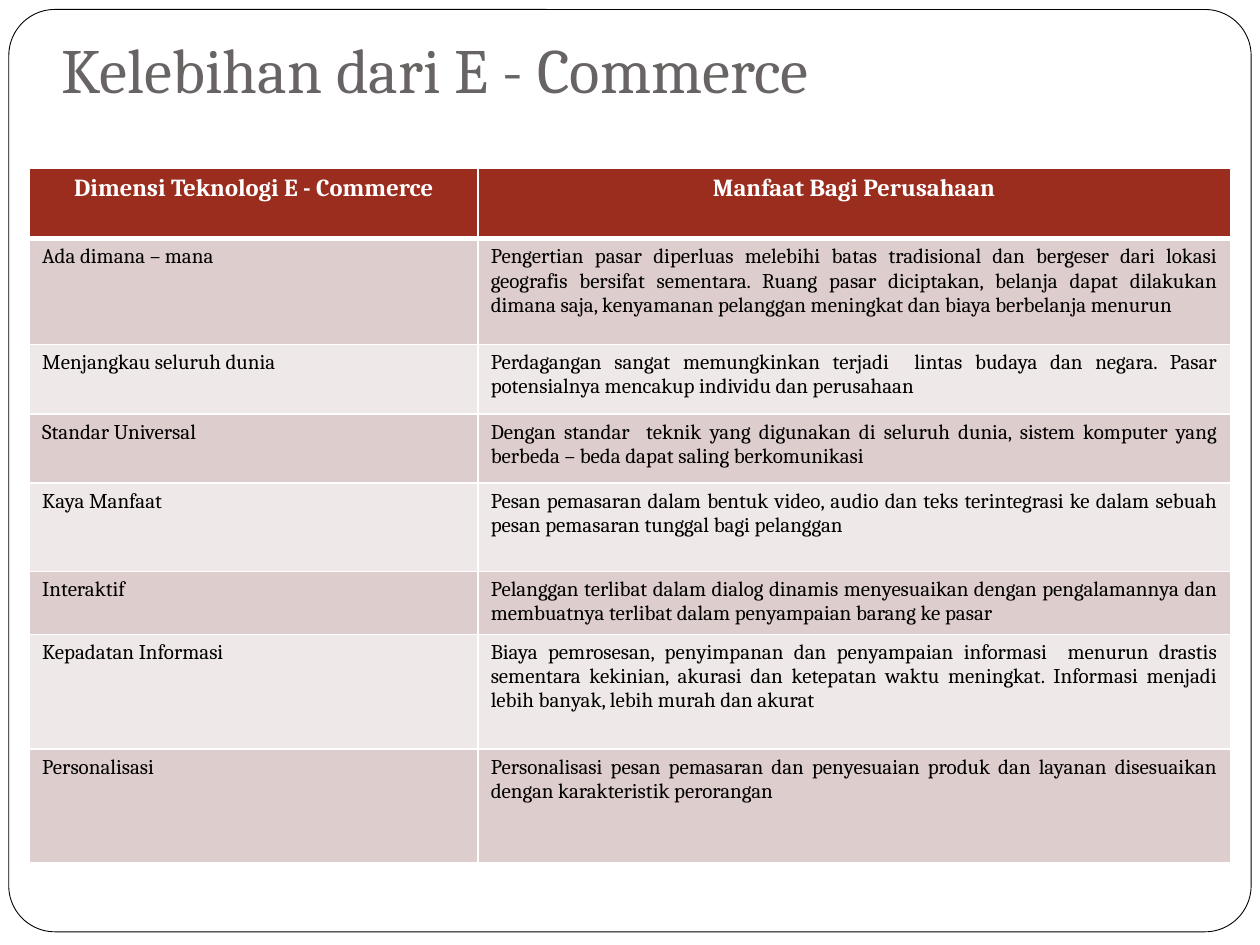
from dataclasses import dataclass

from lxml.etree import SubElement
from pptx import Presentation
from pptx.dml.color import RGBColor
from pptx.enum.shapes import MSO_SHAPE
from pptx.enum.text import MSO_ANCHOR, PP_ALIGN
from pptx.oxml.ns import qn
from pptx.slide import Slide
from pptx.table import _Cell
from pptx.text.text import _Paragraph
from pptx.util import Inches, Pt

WIDTH, HEIGHT = Inches(10), Inches(7.5)
FONT = "Cambria"
COLORS = {
    "paper": "FFFFFF",
    "outline": "000000",
    "title": "696464",
    "header": "9B2D1F",
    "band_dark": "DECDCD",
    "band_light": "EFE8E8",
    "text": "000000",
}
COLUMN_WIDTHS = (3.56, 5.97)


@dataclass
class Row:
    height: float
    dimension: str
    benefit: str
    dimension_align: PP_ALIGN = PP_ALIGN.LEFT
    benefit_align: PP_ALIGN = PP_ALIGN.JUSTIFY


ROWS = [
    Row(0.56, "Dimensi Teknologi E - Commerce", "Manfaat Bagi Perusahaan",
        PP_ALIGN.CENTER, PP_ALIGN.CENTER),
    Row(0.84, "Ada dimana – mana",
        "Pengertian pasar diperluas melebihi batas tradisional dan bergeser dari "
        "lokasi geografis bersifat sementara. Ruang pasar diciptakan, belanja dapat "
        "dilakukan dimana saja, kenyamanan pelanggan meningkat dan biaya berbelanja "
        "menurun", PP_ALIGN.JUSTIFY),
    Row(0.55, "Menjangkau seluruh dunia",
        "Perdagangan sangat memungkinkan terjadi  lintas budaya dan negara. Pasar "
        "potensialnya mencakup individu dan perusahaan", PP_ALIGN.JUSTIFY),
    Row(0.55, "Standar Universal",
        "Dengan standar  teknik yang digunakan di seluruh dunia, sistem komputer "
        "yang berbeda – beda dapat saling berkomunikasi"),
    Row(0.7, "Kaya Manfaat",
        "Pesan pemasaran dalam bentuk video, audio dan teks terintegrasi ke dalam "
        "sebuah pesan pemasaran tunggal bagi pelanggan"),
    Row(0.48, "Interaktif",
        "Pelanggan terlibat dalam dialog dinamis menyesuaikan dengan pengalamannya "
        "dan membuatnya terlibat dalam penyampaian barang ke pasar"),
    Row(0.91, "Kepadatan Informasi",
        "Biaya pemrosesan, penyimpanan dan penyampaian informasi  menurun drastis "
        "sementara kekinian, akurasi dan ketepatan waktu meningkat. Informasi "
        "menjadi lebih banyak, lebih murah dan akurat"),
    Row(0.9, "Personalisasi",
        "Personalisasi pesan pemasaran dan penyesuaian produk dan layanan "
        "disesuaikan dengan karakteristik perorangan"),
]


def color(name: str) -> RGBColor:
    return RGBColor.from_string(COLORS[name])


def write(para: _Paragraph, text: str, size: float, tint: str,
          align: PP_ALIGN = PP_ALIGN.LEFT, bold: bool = False) -> None:
    para.text = text
    para.alignment = align
    for span in para.runs:
        span.font.name = FONT
        span.font.size = Pt(size)
        span.font.bold = bold
        span.font.color.rgb = color(tint)


def set_borders(cell: _Cell, top: float, bottom: float) -> None:
    """Draw white borders; call before the fill, which must follow them."""
    properties = cell._tc.get_or_add_tcPr()
    for side, width in (("L", 1), ("R", 1), ("T", top), ("B", bottom)):
        line = SubElement(properties, qn(f"a:ln{side}"), w=str(Pt(width)))
        fill = SubElement(line, qn("a:solidFill"))
        SubElement(fill, qn("a:srgbClr"), val=COLORS["paper"])


def draw_frame(page: Slide) -> None:
    margin = round(WIDTH * 0.007)
    frame = page.shapes.add_shape(
        MSO_SHAPE.ROUNDED_RECTANGLE, margin, round(HEIGHT * 0.01),
        WIDTH - 2 * margin, round(HEIGHT * 0.976))
    frame.adjustments[0] = 0.05
    frame.shadow.inherit = False
    frame.fill.solid()
    frame.fill.fore_color.rgb = color("paper")
    frame.line.color.rgb = color("outline")
    frame.line.width = Pt(0.5)


def draw_title(page: Slide) -> None:
    box = page.shapes.add_textbox(round(WIDTH * 0.039), round(HEIGHT * 0.021),
                                  round(WIDTH * 0.9), round(HEIGHT * 0.105))
    frame = box.text_frame
    frame.word_wrap = True
    frame.vertical_anchor = MSO_ANCHOR.BOTTOM
    frame.margin_bottom = Inches(0.1)
    write(frame.paragraphs[0], "Kelebihan dari E - Commerce", 36, "title")


def draw_table(page: Slide) -> None:
    table = page.shapes.add_table(
        len(ROWS), len(COLUMN_WIDTHS), round(WIDTH * 0.0235), round(HEIGHT * 0.178),
        Inches(sum(COLUMN_WIDTHS)), Inches(sum(row.height for row in ROWS))).table
    table.horz_banding = False
    for column, width in zip(table.columns, COLUMN_WIDTHS):
        column.width = Inches(width)

    for index, row in enumerate(ROWS):
        table.rows[index].height = Inches(row.height)
        header = index == 0
        band = "header" if header else ("band_light", "band_dark")[index % 2]
        texts = ((row.dimension, row.dimension_align), (row.benefit, row.benefit_align))
        for position, (text, align) in enumerate(texts):
            cell = table.cell(index, position)
            # A thick rule parts the header from the body
            set_borders(cell, top=3 if index == 1 else 1, bottom=3 if header else 1)
            cell.fill.solid()
            cell.fill.fore_color.rgb = color(band)
            write(cell.text_frame.paragraphs[0], text, 14 if header else 12,
                  "paper" if header else "text", align, header)


def main() -> None:
    deck = Presentation()
    deck.slide_width, deck.slide_height = WIDTH, HEIGHT
    page = deck.slides.add_slide(deck.slide_layouts[6])
    draw_frame(page)
    draw_title(page)
    draw_table(page)
    deck.save("out.pptx")


if __name__ == "__main__":
    main()
